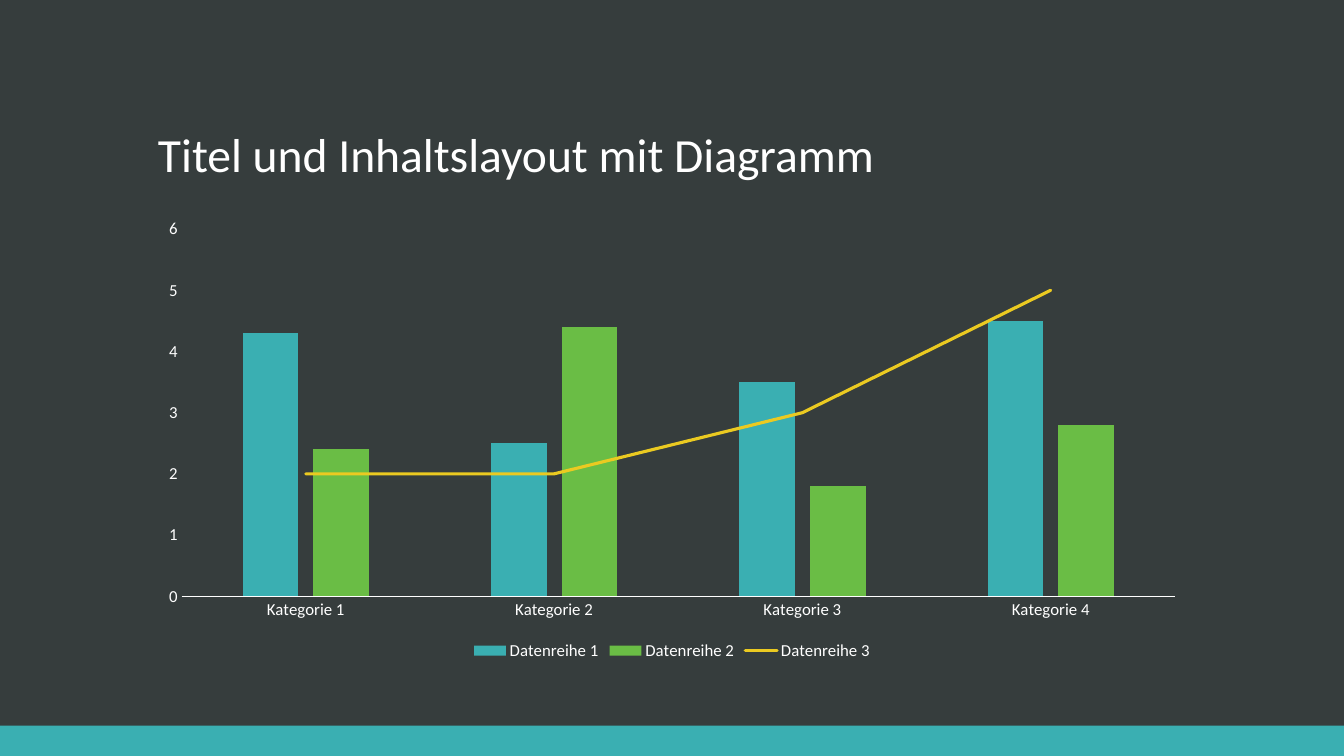
from dataclasses import dataclass

from lxml import etree
from pptx import Presentation, util as u
from pptx.chart.data import CategoryChartData
from pptx.dml.color import RGBColor
from pptx.enum import chart as ch, shapes, text
from pptx.oxml import parse_xml
from pptx.oxml.ns import nsdecls, qn

PX = 9525  # EMU per px, 96 px to the inch
FONT = "Calibri"
BACKGROUND = RGBColor(0x36, 0x3D, 0x3D)
WHITE = RGBColor(0xFF, 0xFF, 0xFF)
TEAL = RGBColor(0x3A, 0xAF, 0xB2)
GREEN = RGBColor(0x6A, 0xBD, 0x45)
YELLOW = RGBColor(0xEB, 0xCA, 0x21)


@dataclass(frozen=True)
class Box:
    x: int
    y: int
    w: int
    h: int

    def emu(self) -> tuple[int, ...]:
        return tuple(v * PX for v in (self.x, self.y, self.w, self.h))


@dataclass(frozen=True)
class Series:
    name: str
    values: tuple[float, ...]
    color: RGBColor
    as_line: bool = False


CATEGORIES = [f"Kategorie {i}" for i in range(1, 5)]
SERIES = [
    Series("Datenreihe 1", (4.3, 2.5, 3.5, 4.5), TEAL),
    Series("Datenreihe 2", (2.4, 4.4, 1.8, 2.8), GREEN),
    Series("Datenreihe 3", (2, 2, 3, 5), YELLOW, as_line=True),
]


def set_font(font, *, size: float, color: RGBColor = WHITE) -> None:
    font.name = FONT
    font.size = u.Pt(size)
    font.bold = False
    font.color.rgb = color


def add_text(s, box: Box, content: str, *, size: float, anchor, spacing: float) -> None:
    tf = s.shapes.add_textbox(*box.emu()).text_frame
    tf.word_wrap = True
    tf.vertical_anchor = anchor
    p = tf.paragraphs[0]
    p.line_spacing = spacing
    r = p.add_run()
    r.text = content
    set_font(r.font, size=size)


def add_bar(s, box: Box, color: RGBColor) -> None:
    sp = s.shapes.add_shape(shapes.MSO_SHAPE.RECTANGLE, *box.emu())
    sp.shadow.inherit = False
    sp.fill.solid()
    sp.fill.fore_color.rgb = color
    sp.line.fill.background()


def move_to_line_plot(chart, line_series: list) -> None:
    """Put the given column series into a line plot on the same axes."""
    bar_plot = chart.plots[0]._element
    line_plot = parse_xml(
        f'<c:lineChart {nsdecls("c")}><c:grouping val="standard"/>'
        '<c:varyColors val="0"/><c:marker val="1"/></c:lineChart>'
    )
    for axis_id in bar_plot.findall(qn("c:axId")):
        etree.SubElement(line_plot, qn("c:axId"), val=axis_id.get("val"))
    bar_plot.addnext(line_plot)
    for ser in line_series:
        el = ser._element
        for invert in el.findall(qn("c:invertIfNegative")):
            el.remove(invert)
        line_plot.find(qn("c:marker")).addprevious(el)
    for ser in chart.plots[1].series:
        ser.marker.style = ch.XL_MARKER_STYLE.NONE
        ser.smooth = False


def add_combo_chart(s, box: Box, categories: list[str], series: list[Series]) -> None:
    data = CategoryChartData()
    data.categories = categories
    for item in series:
        data.add_series(item.name, item.values)
    kind = ch.XL_CHART_TYPE.COLUMN_CLUSTERED
    chart = s.shapes.add_chart(kind, *box.emu(), data).chart
    set_font(chart.font, size=10)
    chart.has_title = False

    # Columns and line
    plot = chart.plots[0]
    plot.vary_by_categories = False
    plot.gap_width = 219
    plot.overlap = -27
    line_series = []
    for item, ser in zip(series, plot.series):
        if item.as_line:
            ser.format.line.color.rgb = item.color
            ser.format.line.width = u.Pt(2.25)
            ser.format.line._ln.set("cap", "rnd")
            line_series.append(ser)
        else:
            ser.format.fill.solid()
            ser.format.fill.fore_color.rgb = item.color
    move_to_line_plot(chart, line_series)

    # Axes
    for axis in (chart.category_axis, chart.value_axis):
        axis.has_major_gridlines = False
        axis.major_tick_mark = axis.minor_tick_mark = ch.XL_TICK_MARK.NONE
        set_font(axis.tick_labels.font, size=12)
    chart.category_axis.format.line.color.rgb = WHITE
    chart.category_axis.format.line.width = u.Pt(0.75)
    value_axis = chart.value_axis
    value_axis.format.line.fill.background()
    value_axis.minimum_scale = 0
    value_axis.maximum_scale = 6
    value_axis.major_unit = 1

    # Legend
    chart.has_legend = True
    chart.legend.position = ch.XL_LEGEND_POSITION.BOTTOM
    chart.legend.include_in_layout = False
    set_font(chart.legend.font, size=12)


def main() -> None:
    prs = Presentation()
    prs.slide_width, prs.slide_height = 1280 * PX, 720 * PX
    s = prs.slides.add_slide(prs.slide_layouts[6])
    s.background.fill.solid()
    s.background.fill.fore_color.rgb = BACKGROUND

    # Footer band, title, chart
    add_bar(s, Box(0, 691, 1280, 29), TEAL)
    add_text(s, Box(141, 49, 998, 130), "Titel und Inhaltslayout mit Diagramm",
             size=34, anchor=text.MSO_ANCHOR.BOTTOM, spacing=0.9)
    add_combo_chart(s, Box(141, 200, 998, 433), CATEGORIES, SERIES)
    prs.save("out.pptx")


if __name__ == "__main__":
    main()
